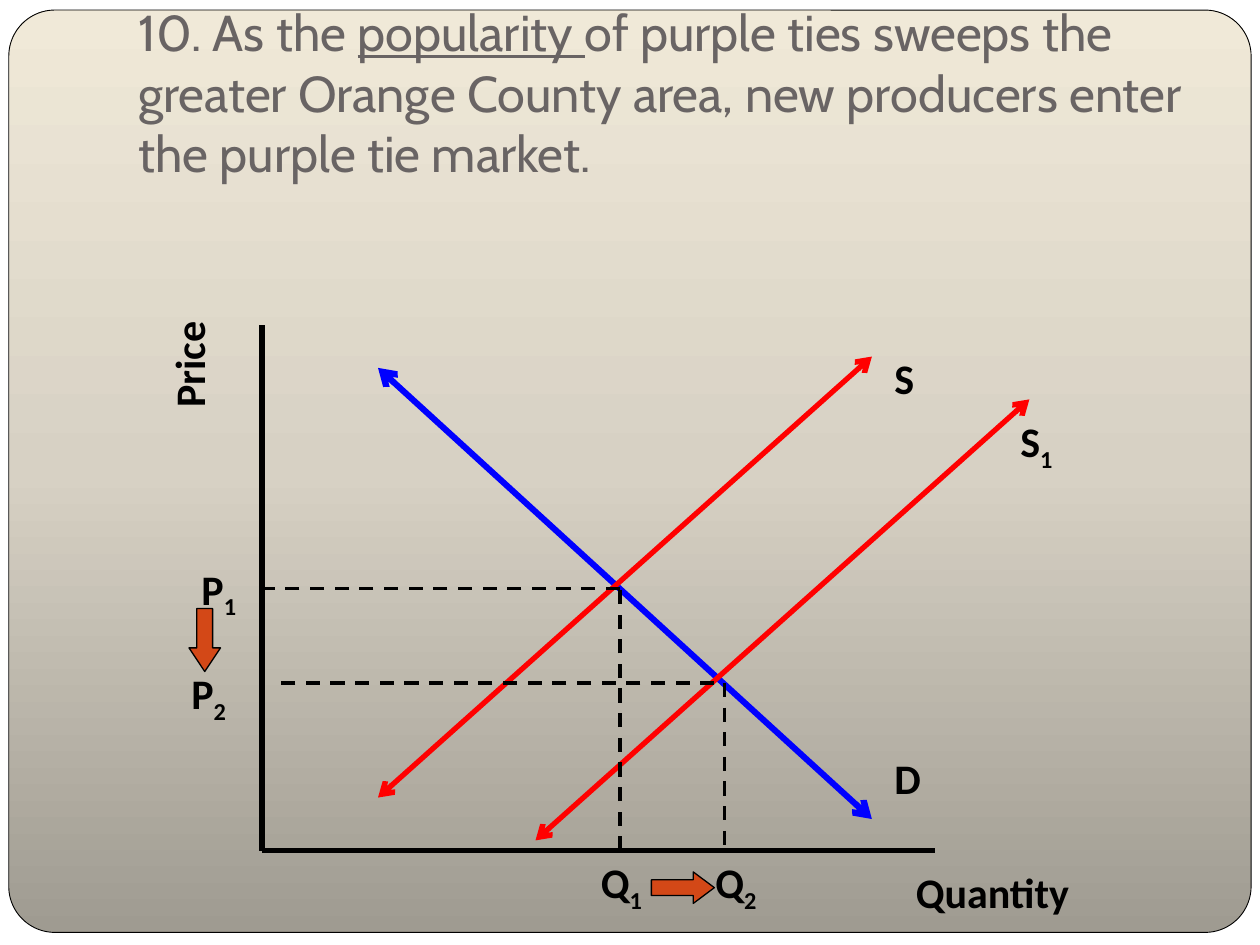
"""Build a supply and demand slide about the purple tie market."""
from copy import deepcopy
from lxml.etree import SubElement
from pptx import Presentation
from pptx.dml.color import RGBColor
from pptx.enum.dml import MSO_LINE as Dash
from pptx.enum.shapes import MSO_CONNECTOR as Link, MSO_SHAPE as Kind
from pptx.enum.text import MSO_ANCHOR as Anchor
from pptx.oxml.ns import qn
from pptx.util import Inches, Pt

BLACK = RGBColor(0x00, 0x00, 0x00)
BLUE = RGBColor(0x00, 0x00, 0xFF)
RED = RGBColor(0xFF, 0x00, 0x00)
RUST = RGBColor(0xD3, 0x48, 0x17)
GREY = RGBColor(0x69, 0x64, 0x64)
SHADES = [
    (0, RGBColor(0x9F, 0x9B, 0x91)),
    (0.5, RGBColor(0xD7, 0xD1, 0xC4)),
    (1, RGBColor(0xF0, 0xE9, 0xD8)),
]

TITLE = [
    ("10. As the ", {}),
    ("popularity ", {"underline": True}),
    ("of purple ties sweeps the greater Orange County area, "
     "new producers enter the purple tie market.", {}),
]
HEAD = {"name": "Cabin", "size": Pt(28.8)}
BOLD = {"name": "Calibri", "size": Pt(24), "bold": True}

LEFT, BASE = 2.08, 6.75
P1, P2 = 4.67, 5.42
Q1, Q2 = 4.92, 5.75

AXES = [(LEFT, 2.58, LEFT, BASE), (LEFT, BASE, 7.42, BASE)]
CURVES = [
    ((3, 2.92, 6.92, 6.5), BLUE, 3.5),
    ((3, 6.33, 6.92, 2.83), RED, 3),
    ((4.25, 6.67, 8.17, 3.17), RED, 3),
]
GUIDES = [
    (Q1, P1, LEFT, P1),
    (Q1, BASE, Q1, P1),
    (5.67, P2, 2.17, P2),
    (Q2, P2, Q2, BASE),
]
LABELS = [
    ("Quantity", "", (7.17, 6.83, 1.92, 0.5), 0),
    ("Price", "", (0.83, 2.42, 1.33, 0.5), 270),
    ("D", "", (7, 5.92, 1.08, 0.5), 0),
    ("S", "", (7, 2.75, 0.92, 0.5), 0),
    ("S", "1", (8, 3.25, 0.92, 0.5), 0),
    ("P", "1", (1.5, 4.42, 0.92, 0.5), 0),
    ("P", "2", (1.42, 5.25, 0.92, 0.5), 0),
    ("Q", "1", (4.67, 6.75, 0.92, 0.5), 0),
    ("Q", "2", (5.58, 6.75, 1, 0.5), 0),
]
SHIFTS = [
    (Kind.DOWN_ARROW, (1.5, 4.83, 0.25, 0.5), 0.75),
    (Kind.RIGHT_ARROW, (5.17, 6.92, 0.5, 0.25), 0.67),
]


def style(item, form):
    for key, value in form.items():
        setattr(item, key, value)


def add_run(para, text, form, color):
    run = para.add_run()
    run.text = text
    style(run.font, form)
    run.font.color.rgb = color
    return run


def add_box(slide, place, **form):
    box = slide.shapes.add_textbox(*map(Inches, place))
    style(box.text_frame, {"word_wrap": True, **form})
    return box, box.text_frame.paragraphs[0]


def add_shape(slide, kind, place, width):
    shape = slide.shapes.add_shape(kind, *map(Inches, place))
    shape.shadow.inherit = False
    shape.line.color.rgb = BLACK
    shape.line.width = Pt(width)
    return shape


def add_line(slide, ends, color, width, dash=None, heads=False):
    link = slide.shapes.add_connector(Link.STRAIGHT, *map(Inches, ends))
    link.line.color.rgb = color
    style(link.line, {"width": Pt(width), "dash_style": dash})
    if heads:
        for tag in ("a:headEnd", "a:tailEnd"):
            SubElement(link.line._get_or_add_ln(), qn(tag), type="arrow")
    SubElement(link._element.spPr, qn("a:effectLst"))


def add_panel(slide):
    panel = add_shape(slide, Kind.ROUNDED_RECTANGLE, (0.07, 0.08, 9.86, 7.32), 0.5)
    panel.adjustments[0] = 0.05
    panel.fill.gradient()
    panel.fill.gradient_angle = 90
    stops = panel._element.spPr.find(qn("a:gradFill")).find(qn("a:gsLst"))
    stops.append(deepcopy(stops[-1]))
    for stop, (spot, color) in zip(panel.fill.gradient_stops, SHADES):
        stop.position = spot
        stop.color.rgb = color


def main():
    deck = Presentation()
    style(deck, {"slide_width": Inches(10), "slide_height": Inches(7.5)})
    slide = deck.slides.add_slide(deck.slide_layouts[6])
    add_panel(slide)
    _, para = add_box(slide, (1, 0.3, 8.5, 1.25), vertical_anchor=Anchor.BOTTOM,
                      margin_bottom=Inches(0.1))
    for text, form in TITLE:
        add_run(para, text, {**HEAD, **form}, GREY)
    for ends in AXES:
        add_line(slide, ends, BLACK, 3)
    for ends, color, width in CURVES:
        add_line(slide, ends, color, width, heads=True)
    for ends in GUIDES:
        add_line(slide, ends, BLACK, 2, Dash.DASH)
    for name, sub, place, turn in LABELS:
        box, para = add_box(slide, place)
        box.rotation = turn
        add_run(para, name, BOLD, BLACK)
        if sub:
            run = add_run(para, sub, BOLD, BLACK)
            run._r.get_or_add_rPr().set("baseline", "-25000")
    for kind, place, tip in SHIFTS:
        arrow = add_shape(slide, kind, place, 0.75)
        arrow.fill.solid()
        arrow.fill.fore_color.rgb = RUST
        arrow.adjustments[1] = tip
    deck.save("out.pptx")


if __name__ == "__main__":
    main()
